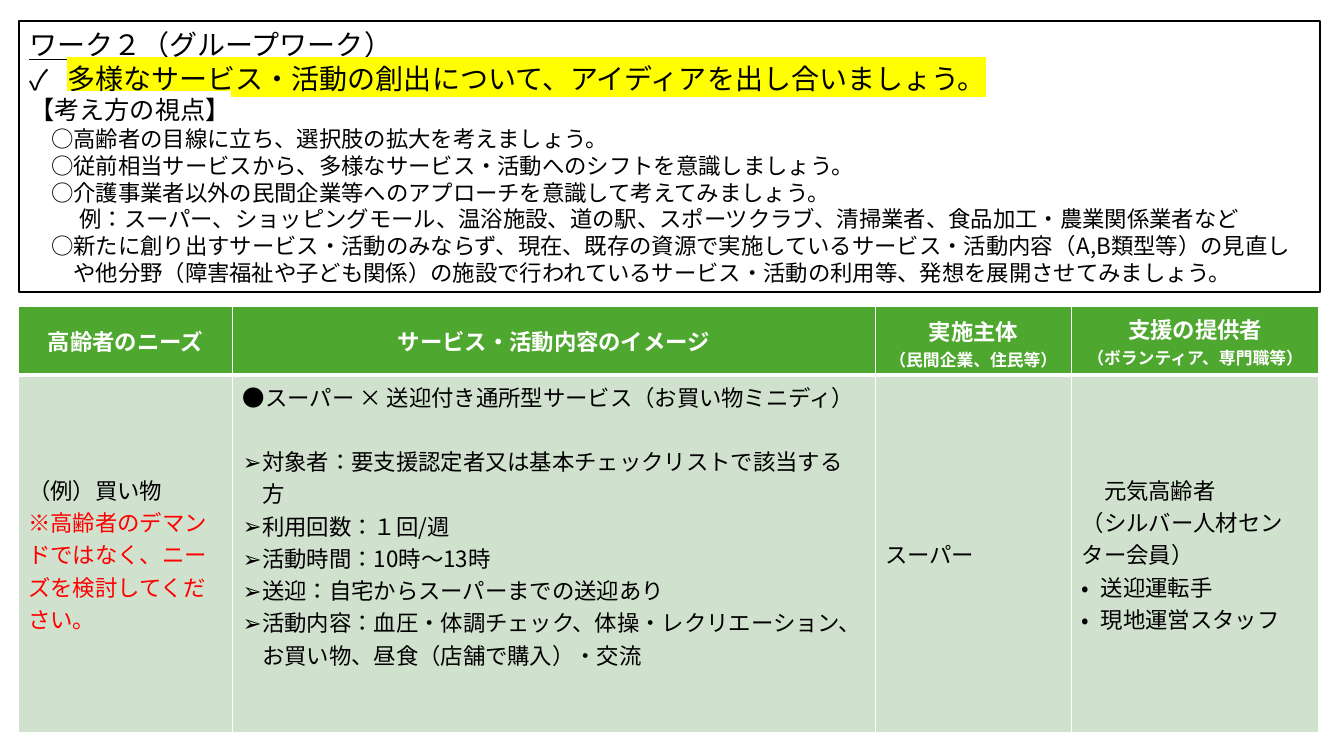
from dataclasses import dataclass
from lxml.etree import SubElement as Sub
from pptx import Presentation
from pptx.dml.color import RGBColor as RGB
from pptx.enum.lang import MSO_LANGUAGE_ID as Lang
from pptx.enum.shapes import MSO_SHAPE as Shape
from pptx.enum.text import MSO_ANCHOR as Anchor, PP_ALIGN as Align
from pptx.oxml.ns import qn
from pptx.util import Inches, Pt


@dataclass(frozen=True)
class Theme:
    face: str = "Noto Sans CJK JP"
    black: str = "000000"
    white: str = "FFFFFF"
    red: str = "FF0000"
    green: str = "4EA72E"
    pale: str = "D0E1CD"
    mark: str = "FFFF00"
    title: int = 20
    lead: int = 18
    body: int = 16
    note: int = 12


T = Theme()


def line(text, **style):
    return text, style


def item(text, sign):
    return line(text, sign=sign, left=0.19)


# Wording of the task box
TASK = [
    line("ワーク２（グループワーク）", size=T.title, under=True),
    line("多様なサービス・活動の創出について、アイディアを出し合いましょう。",
         size=T.title, mark=T.mark, sign="✓", left=0.38),
    line("【考え方の視点】", size=T.lead, mark=T.white),
    line("○高齢者の目線に立ち、選択肢の拡大を考えましょう。", left=0.22),
    line("○従前相当サービスから、多様なサービス・活動へのシフトを意識しましょう。", left=0.22),
    line("○介護事業者以外の民間企業等へのアプローチを意識して考えてみましょう。", left=0.22),
    line("例：スーパー、ショッピングモール、温浴施設、道の駅、スポーツクラブ、"
         "清掃業者、食品加工・農業関係業者など", left=0.5),
    line("○新たに創り出すサービス・活動のみならず、現在、既存の資源で実施している"
         "サービス・活動内容（A,B類型等）の見直し", left=0.22),
    line("や他分野（障害福祉や子ども関係）の施設で行われているサービス・活動の利用等、"
         "発想を展開させてみましょう。", left=0.44),
]

# Wording of the table, one list of lines per cell
HEAD = [
    [line("高齢者のニーズ")],
    [line("サービス・活動内容のイメージ")],
    [line("実施主体"), line("（民間企業、住民等）", size=T.note)],
    [line("支援の提供者"), line("（ボランティア、専門職等）", size=T.note)],
]
BODY = [
    [line("（例）買い物"),
     line("※高齢者のデマン", color=T.red),
     line("ドではなく、ニーズを検討してください。", color=T.red)],
    [line("●スーパー × 送迎付き通所型サービス（お買い物ミニディ）", after=23),
     item("対象者：要支援認定者又は基本チェックリストで該当する方", "➢"),
     item("利用回数：１回/週", "➢"),
     item("活動時間：10時～13時", "➢"),
     item("送迎：自宅からスーパーまでの送迎あり", "➢"),
     item("活動内容：血圧・体調チェック、体操・レクリエーション、"
          "お買い物、昼食（店舗で購入）・交流", "➢")],
    [line("スーパー")],
    [line("元気高齢者", left=0.22),
     line("（シルバー人材センター会員）"),
     item("送迎運転手", "•"),
     item("現地運営スタッフ", "•")],
]
COLS = [2.13, 6.37, 1.95, 2.45]
ROWS = [0.68, 3.55]


def set_all(thing, **values):
    for name, value in values.items():
        setattr(thing, name, value)


def write(frame, lines, align=Align.LEFT, pitch=None, **base):
    """Fill a text frame; pitch is the line height per point of type size."""
    for i, (text, style) in enumerate(lines):
        look = {"size": T.body, "color": T.black, **base, **style}
        para = frame.paragraphs[0] if i == 0 else frame.add_paragraph()
        set_all(para, alignment=align, space_after=Pt(look.get("after", 0)),
                line_spacing=Pt(look["size"] * pitch) if pitch else None)
        run = para.add_run()
        run.text = text
        run.font.color.rgb = RGB.from_string(look["color"])
        set_all(run.font, size=Pt(look["size"]), name=T.face,
                bold=look.get("bold", False), underline=look.get("under", False),
                language_id=Lang.JAPANESE)

        # East Asian face and highlight
        props = run.font._element
        Sub(props, qn("a:ea"), typeface=T.face)
        if "mark" in look:
            light = Sub(props, qn("a:highlight"))
            Sub(light, qn("a:srgbClr"), val=look["mark"])
            props.find(qn("a:solidFill")).addnext(light)

        # Indent and bullet
        left = Inches(look.get("left", 0))
        hang = -left if "sign" in look else 0
        frmt = para._p.get_or_add_pPr()
        frmt.set("marL", str(left))
        frmt.set("indent", str(hang))
        if "sign" in look:
            Sub(frmt, qn("a:buFont"), typeface=T.face)
            Sub(frmt, qn("a:buChar"), char=look["sign"])


def edge(cell, **widths):
    """Draw white cell borders, placed before the fill."""
    props = cell._tc.get_or_add_tcPr()
    for i, (side, width) in enumerate(widths.items()):
        rule = Sub(props, qn("a:ln" + side), w=str(Pt(width)))
        fill = Sub(rule, qn("a:solidFill"))
        Sub(fill, qn("a:srgbClr"), val=T.white)
        props.insert(i, rule)


def task_box(slide, x, y, w, h):
    box = slide.shapes.add_shape(
        Shape.RECTANGLE, Inches(x), Inches(y), Inches(w), Inches(h))
    box.shadow.inherit = False
    box.fill.solid()
    box.fill.fore_color.rgb = RGB.from_string(T.white)
    box.line.color.rgb = RGB.from_string(T.black)
    box.line.width = Pt(1.5)
    set_all(box.text_frame, word_wrap=True, vertical_anchor=Anchor.MIDDLE,
            margin_top=Inches(0.04), margin_bottom=Inches(0.04))
    write(box.text_frame, TASK, pitch=1.2)


def idea_table(slide, x, y, w, h):
    grid = slide.shapes.add_table(
        2, len(COLS), Inches(x), Inches(y), Inches(w), Inches(h)).table
    grid.horz_banding = False
    for col, wide in zip(grid.columns, COLS):
        col.width = Inches(wide * w / sum(COLS))
    for row, tall in zip(grid.rows, ROWS):
        row.height = Inches(tall * h / sum(ROWS))

    kinds = [
        (HEAD, T.green, 3, {"align": Align.CENTER, "color": T.white, "bold": True}),
        (BODY, T.pale, 1, {}),
    ]
    for r, (texts, fill, base, look) in enumerate(kinds):
        for c, lines in enumerate(texts):
            cell = grid.cell(r, c)
            cell.vertical_anchor = Anchor.MIDDLE
            cell.fill.solid()
            cell.fill.fore_color.rgb = RGB.from_string(fill)
            edge(cell, L=1, R=1, T=1 if r == 0 else 3, B=base)
            write(cell.text_frame, lines, **look)
    set_all(grid.cell(0, 2), margin_top=Inches(0.08), margin_bottom=Inches(0.04))
    grid.cell(1, 1).vertical_anchor = Anchor.TOP


def main():
    deck = Presentation()
    set_all(deck, slide_width=Inches(13.33), slide_height=Inches(7.5))
    slide = deck.slides.add_slide(deck.slide_layouts[6])
    task_box(slide, 0.19, 0.21, 12.9, 2.69)
    idea_table(slide, 0.18, 3.04, sum(COLS), sum(ROWS))
    deck.save("out.pptx")


if __name__ == "__main__":
    main()
